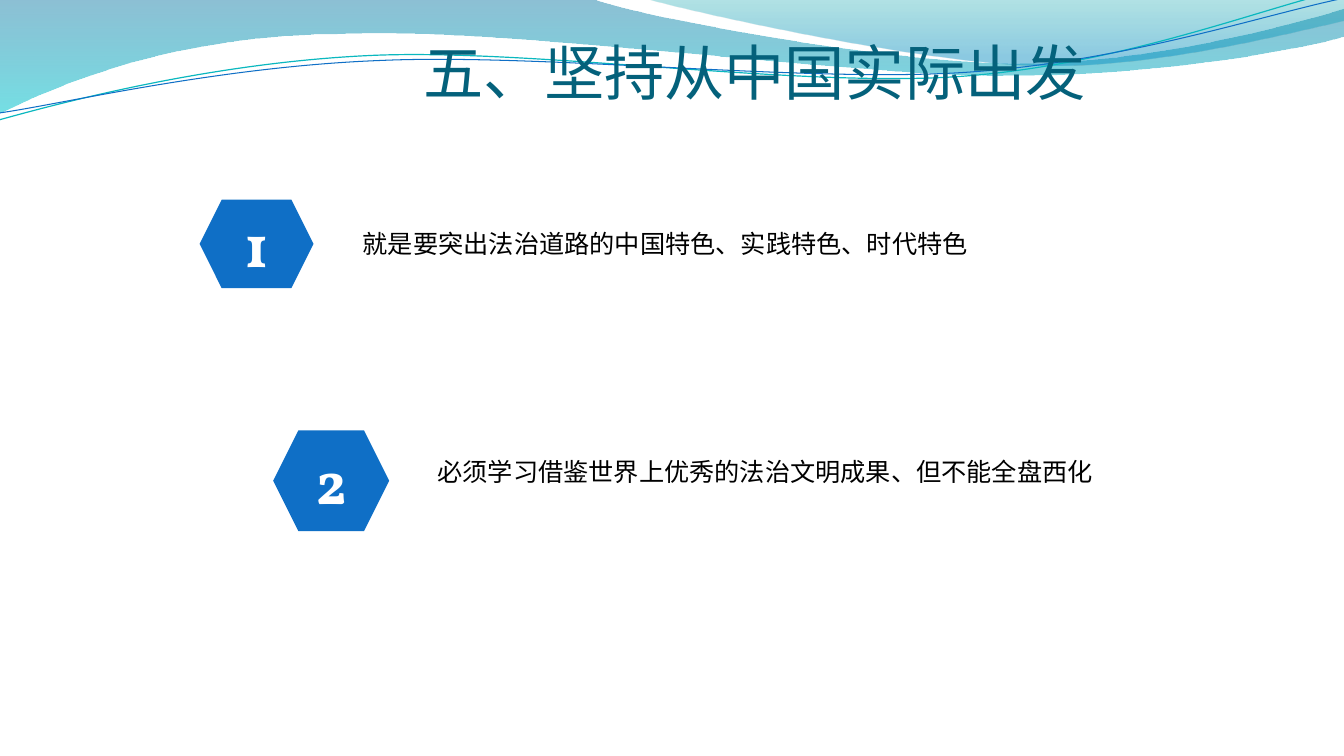
"""Build the slide on proceeding from China's realities, with a wave header and two numbered points."""
import math

from lxml import etree
from pptx import Presentation
from pptx.dml.color import RGBColor
from pptx.enum import shapes, text
from pptx.oxml import ns
from pptx.util import Inches, Pt

TITLE = "五、坚持从中国实际出发"
POINTS = [
    ("1", (1.98, 1.98, 1.13, 0.88),
     "就是要突出法治道路的中国特色、实践特色、时代特色", (3.5, 2.22, 6.26, 0.4)),
    ("2", (2.71, 4.27, 1.15, 1),
     "必须学习借鉴世界上优秀的法治文明成果、但不能全盘西化", (4.24, 4.48, 6.77, 0.4)),
]
BANDS = [
    ((-0.01, -0.01, 13.36, 1.14),
     [[(0, -0.01)], [(5.87, -0.01)],
      [(6.34, 0.17), (8.85, 0.63), (10.11, 0.63)],
      [(11.38, 0.63), (12.78, 0.26), (13.33, 0.09)], [(13.35, 0.36)],
      [(13.11, 0.44), (11.6, 0.76), (9.94, 0.75)],
      [(8.29, 0.75), (5.09, 0.28), (3.43, 0.34)],
      [(1.72, 0.35), (0.61, 0.83), (-0.01, 1.13)], [(0, -0.01)]],
     [(0, "0074A1", 45), (1, "00C6CF", 55)]),
    ((6.39, -0.01, 6.94, 0.7),
     [[(6.39, -0.01)],
      [(6.79, 0.11), (9.09, 0.62), (10.25, 0.65)],
      [(11.41, 0.69), (12.82, 0.32), (13.33, 0.21)], [(13.33, 0)], [(6.39, -0.01)]],
     [(0, "00A1A9", 30), (0.8, "008BBF", 45)]),
]
STRANDS = [
    ((-0.03, 0.22, 13.36, 0.71),
     [[(-0.01, 1.19)],
      [(0.64, 1.01), (2.11, 0.62), (3.69, 0.55)],
      [(5.27, 0.48), (7.9, 0.87), (9.5, 0.76)],
      [(11.1, 0.65), (12.52, 0.08), (13.31, -0.1)]],
     "0AB8BF", 0.85),
    ((-0.02, 0.3, 13.38, 0.58),
     [[(0, 1.12)],
      [(0.63, 1.03), (2.18, 0.66), (3.78, 0.6)],
      [(5.37, 0.53), (7.96, 0.82), (9.55, 0.72)],
      [(11.15, 0.62), (12.55, 0.14), (13.34, -0.02)]],
     "0F6FC6", 0.75),
]
STRAND_TILT = -2.7


def rgb(value):
    return RGBColor.from_string(value)


def box(lengths):
    return [Inches(n) for n in lengths]


def to_local(point, frame, tilt):
    left, top, width, height = frame
    dx = point[0] - left - width / 2
    dy = point[1] - top - height / 2
    cos, sin = math.cos(math.radians(tilt)), math.sin(math.radians(tilt))
    return box((width / 2 + dx * cos + dy * sin, height / 2 - dx * sin + dy * cos))


def add_outline(s, frame, steps, close, tilt=0):
    start, *ends = [box(step[-1]) for step in steps]
    builder = s.shapes.build_freeform(*start)
    builder.add_line_segments(ends, close=close)
    sp = builder.convert_to_shape()
    sp.left, sp.top, sp.width, sp.height = box(frame)
    sp.rotation = tilt % 360
    sp.shadow.inherit = False
    outline = next(sp.element.iter(ns.qn("a:path")))
    outline.set("w", str(sp.width))
    outline.set("h", str(sp.height))
    for child in list(outline):
        outline.remove(child)
    for i, step in enumerate(steps):
        tag = "a:moveTo" if i == 0 else "a:lnTo" if len(step) == 1 else "a:cubicBezTo"
        command = etree.SubElement(outline, ns.qn(tag))
        for point in step:
            x, y = to_local(point, frame, tilt)
            etree.SubElement(command, ns.qn("a:pt"), x=str(x), y=str(y))
    if close:
        etree.SubElement(outline, ns.qn("a:close"))
    return sp


def add_band(s, frame, steps, colours):
    sp = add_outline(s, frame, steps, True)
    sp.line.fill.background()
    sp.fill.gradient()
    sp.fill.gradient_angle = 270
    for stop, (position, colour, _) in zip(sp.fill.gradient_stops, colours):
        stop.position = position
        stop.color.rgb = rgb(colour)
    for clr, (_, _, opacity) in zip(sp.element.iter(ns.qn("a:srgbClr")), colours):
        etree.SubElement(clr, ns.qn("a:alpha"), val=str(opacity * 1000))


def add_strand(s, frame, steps, colour, width):
    sp = add_outline(s, frame, steps, False, STRAND_TILT)
    sp.fill.background()
    sp.line.color.rgb = rgb(colour)
    sp.line.width = Pt(width)


def write(tf, words, font, size, colour, align, bold=False):
    p = tf.paragraphs[0]
    p.alignment = align
    r = p.add_run()
    r.text = words
    r.font.name = font
    r.font.size = Pt(size)
    r.font.bold = bold
    r.font.color.rgb = rgb(colour)


def add_title(s):
    sp = s.shapes.title
    sp.left, sp.top, sp.width, sp.height = box((2.47, 0.36, 10.03, 0.71))
    tf = sp.text_frame
    tf.auto_size = text.MSO_AUTO_SIZE.NONE
    tf.vertical_anchor = text.MSO_ANCHOR.BOTTOM
    tf.margin_left = tf.margin_right = tf.margin_bottom = 0
    tf.margin_top = Inches(0.05)
    write(tf, TITLE, "Calibri", 43, "04617B", text.PP_ALIGN.CENTER)
    sp.element.getparent().append(sp.element)


def add_point(s, number, badge, words, label):
    group = s.shapes.add_group_shape()
    sp = group.shapes.add_shape(shapes.MSO_SHAPE.HEXAGON, *box(badge))
    sp.shadow.inherit = False
    sp.fill.solid()
    sp.fill.fore_color.rgb = rgb("0F6FC6")
    sp.line.fill.background()
    sp.text_frame.vertical_anchor = text.MSO_ANCHOR.MIDDLE
    write(sp.text_frame, number, "Vollkorn", 43, "FFFFFF", text.PP_ALIGN.CENTER, True)
    tf = group.shapes.add_textbox(*box(label)).text_frame
    tf.word_wrap = False
    tf.auto_size = text.MSO_AUTO_SIZE.SHAPE_TO_FIT_TEXT
    write(tf, words, "Arial", 18, "000000", text.PP_ALIGN.LEFT)


def main():
    prs = Presentation()
    prs.slide_width, prs.slide_height = box((13.33, 7.5))
    s = prs.slides.add_slide(prs.slide_layouts[5])
    for band in BANDS:
        add_band(s, *band)
    for strand in STRANDS:
        add_strand(s, *strand)
    add_title(s)
    for point in POINTS:
        add_point(s, *point)
    prs.save("out.pptx")


if __name__ == "__main__":
    main()
